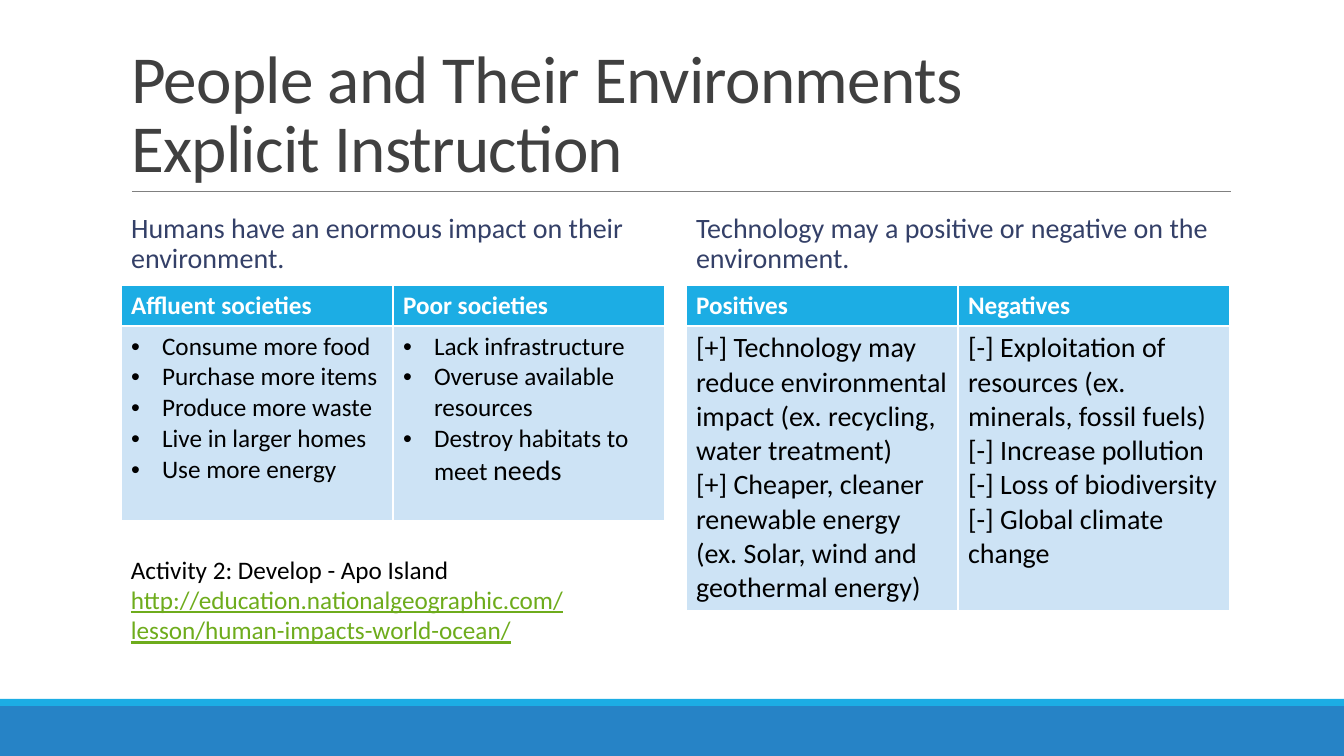
from lxml.etree import SubElement
from pptx import Presentation
from pptx.dml.color import RGBColor
from pptx.enum.shapes import MSO_CONNECTOR, MSO_SHAPE
from pptx.enum.text import MSO_ANCHOR, MSO_AUTO_SIZE, PP_ALIGN
from pptx.oxml.ns import qn
from pptx.util import Pt

PX = 914400 / 100.8
WHITE = RGBColor(0xFF, 0xFF, 0xFF)
BLACK = RGBColor(0x00, 0x00, 0x00)
CYAN = RGBColor(0x1C, 0xAD, 0xE4)
BLUE = RGBColor(0x26, 0x83, 0xC6)
PALE = RGBColor(0xCD, 0xE3, 0xF5)
GREY = RGBColor(0x80, 0x80, 0x80)
CHARCOAL = RGBColor(0x40, 0x40, 0x40)
NAVY = RGBColor(0x34, 0x40, 0x68)
GREEN = RGBColor(0x6E, 0xAC, 0x1C)


def px(*lengths):
    return [round(length * PX) for length in lengths]


def write(para, text, size=18, color=BLACK, bold=False, underline=None, spacing=None):
    span = para.add_run()
    span.text = text
    span.font.name = "Calibri"
    span.font.size = Pt(size)
    span.font.color.rgb = color
    span.font.bold = bold
    span.font.underline = underline
    if spacing is not None:
        span.font._element.set("spc", str(spacing))


deck = Presentation()
deck.slide_width, deck.slide_height = px(1344, 756)
page = deck.slides.add_slide(deck.slide_layouts[4])
title, left_body, left_content, right_body, right_content = page.placeholders
for unused in (left_content, right_content):
    unused.element.getparent().remove(unused.element)

for top, height, color in ((706, 50, BLUE), (699, 7, CYAN)):
    band = page.shapes.add_shape(MSO_SHAPE.RECTANGLE, *px(0, top, 1344, height))
    band.shadow.inherit = False
    band.fill.solid()
    band.fill.fore_color.rgb = color
    band.line.fill.background()

rule = page.shapes.add_connector(MSO_CONNECTOR.STRAIGHT, *px(132, 191, 1231, 191))
rule.line.color.rgb = GREY
rule.line.width = Pt(0.5)
SubElement(rule._element.spPr, qn("a:effectLst"))

title.left, title.top, title.width, title.height = px(121, 31, 1109, 160)
title.text_frame.auto_size = MSO_AUTO_SIZE.NONE
title.text_frame.vertical_anchor = MSO_ANCHOR.BOTTOM
para = title.text_frame.paragraphs[0]
para.alignment = PP_ALIGN.LEFT
para.line_spacing = 0.85
write(para, "People and Their Environments", size=48, color=CHARCOAL, spacing=-50)
para.add_line_break()
write(para, "Explicit Instruction", size=48, color=CHARCOAL, spacing=-50)

columns = [
    (121, left_body, "Humans have an enormous impact on their environment.", 195, 18, True, [
        ("Affluent societies", ["Consume more food", "Purchase more items", "Produce more waste",
                                "Live in larger homes", "Use more energy"]),
        ("Poor societies", ["Lack infrastructure", "Overuse available resources",
                            "Destroy habitats to meet "]),
    ]),
    (686, right_body, "Technology may a positive or negative on the environment.", 279, 20, False, [
        ("Positives", ["[+] Technology may reduce environmental impact (ex. recycling, water treatment)",
                       "[+] Cheaper, cleaner renewable energy (ex. Solar, wind and geothermal energy)"]),
        ("Negatives", ["[-] Exploitation of resources (ex. minerals, fossil fuels)",
                       "[-] Increase pollution", "[-] Loss of biodiversity",
                       "[-] Global climate change"]),
    ]),
]
for left, body, statement, row_height, size, bulleted, topics in columns:
    body.left, body.top, body.width, body.height = px(left, 204, 544, 81)
    body.text_frame.auto_size = MSO_AUTO_SIZE.NONE
    body.text_frame.vertical_anchor = MSO_ANCHOR.MIDDLE
    para = body.text_frame.paragraphs[0]
    para.line_spacing = 0.9
    para.space_before = Pt(0)
    para.space_after = Pt(2)
    write(para, statement, size=20, color=NAVY)

    table = page.shapes.add_table(2, 2, *px(left, 285, 544, 41 + row_height)).table
    table.rows[0].height, table.rows[1].height = px(41, row_height)
    for column, (heading, points) in enumerate(topics):
        header, cell = table.cell(0, column), table.cell(1, column)
        for box, color in ((header, CYAN), (cell, PALE)):
            box.fill.solid()
            box.fill.fore_color.rgb = color
        write(header.text_frame.paragraphs[0], heading, color=WHITE, bold=True)
        frame = cell.text_frame
        for number, point in enumerate(points):
            para = frame.add_paragraph() if number else frame.paragraphs[0]
            if bulleted:
                properties = para._p.get_or_add_pPr()
                indent = px(31)[0]
                properties.set("marL", str(indent))
                properties.set("indent", str(-indent))
                SubElement(properties, qn("a:buFont"), typeface="Arial")
                SubElement(properties, qn("a:buChar"), char="•")
            write(para, point, size=size)
            if point.startswith("Destroy"):
                write(para, "needs", size=20)

activity = page.shapes.add_textbox(*px(121, 549, 525, 102)).text_frame
activity.word_wrap = True
write(activity.paragraphs[0], "Activity 2: Develop - Apo Island")
write(activity.add_paragraph(),
      "http://education.nationalgeographic.com/lesson/human-impacts-world-ocean/",
      color=GREEN, underline=True)

deck.save("out.pptx")
